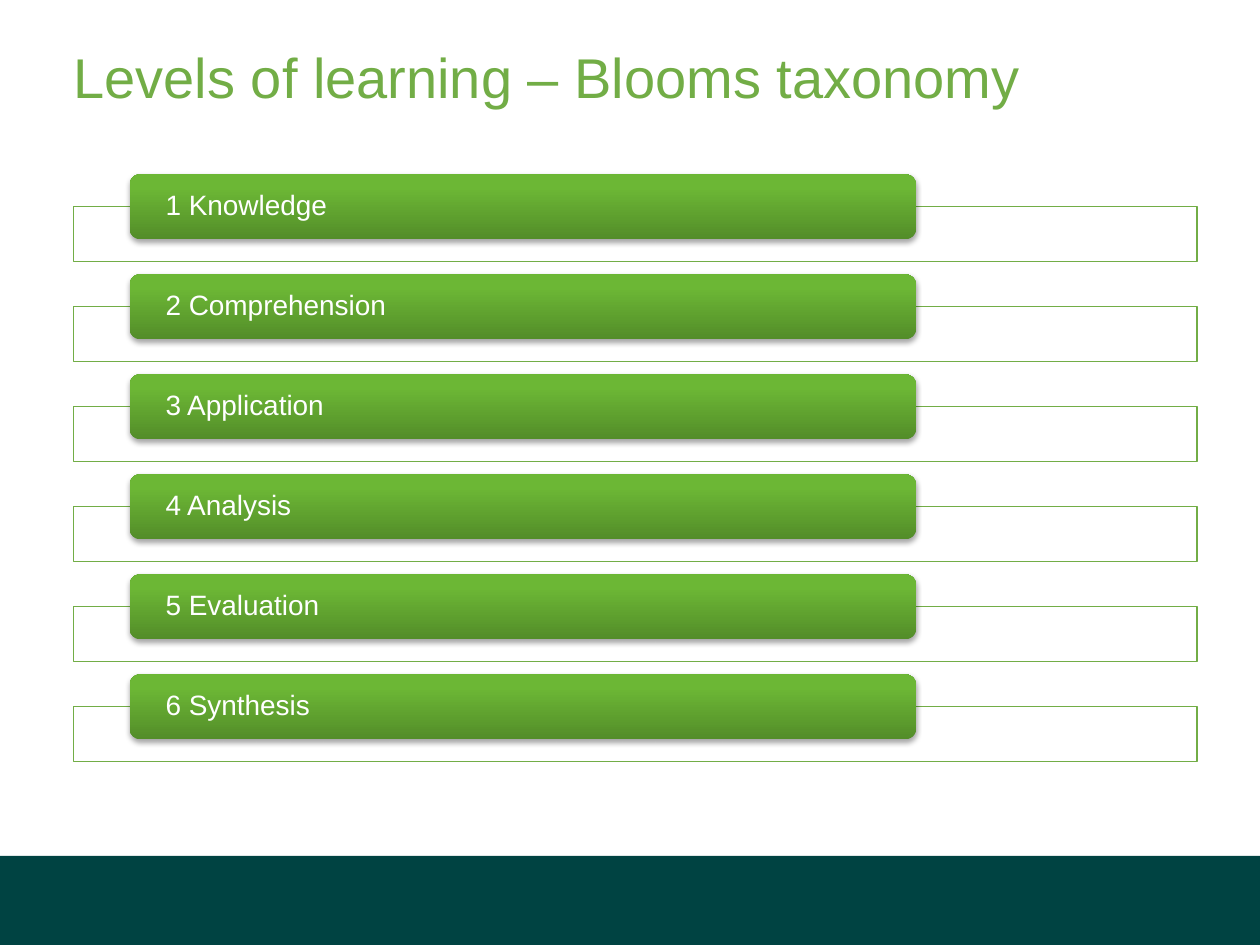
import copy

import pptx
import pptx.dml.color
import pptx.enum.shapes
import pptx.enum.text
import pptx.oxml
import pptx.oxml.ns
import pptx.util

Pt = pptx.util.Pt
RGBColor = pptx.dml.color.RGBColor
SHAPE = pptx.enum.shapes.MSO_SHAPE
ANCHOR = pptx.enum.text.MSO_ANCHOR
ALIGN = pptx.enum.text.PP_ALIGN
qn = pptx.oxml.ns.qn

WHITE = RGBColor(0xFF, 0xFF, 0xFF)
TEAL = RGBColor(0x00, 0x43, 0x42)
GREEN = RGBColor(0x72, 0xAD, 0x46)
BAR_GRADIENT = [
    (0, RGBColor(0x53, 0x8D, 0x29)),
    (0.8, RGBColor(0x6C, 0xB7, 0x35)),
    (1, RGBColor(0x6C, 0xBA, 0x33)),
]

FONT = "Arial"
LEFT, CONTENT_WIDTH = 42, 642
FIRST_BAR_TOP, LEVEL_PITCH = 99.6, 57.15
BAR_LEFT, BAR_WIDTH, BAR_HEIGHT = 74.1, 449.4, 37.2
FRAME_OFFSET, FRAME_HEIGHT = 18.5, 31.5
LEVELS = ["Knowledge", "Comprehension", "Application",
          "Analysis", "Evaluation", "Synthesis"]

SHADOW_XML = (
    f'<a:outerShdw {pptx.oxml.ns.nsdecls("a")} blurRad="{Pt(3.1)}" dist="{Pt(1.8)}"'
    ' dir="5400000" rotWithShape="0">'
    '<a:srgbClr val="000000"><a:alpha val="35000"/></a:srgbClr></a:outerShdw>'
)


def add_box(slide, kind, left, top, width, height):
    """Add a shape without line or shadow."""
    box = slide.shapes.add_shape(kind, Pt(left), Pt(top), Pt(width), Pt(height))
    box.shadow.inherit = False
    box.line.fill.background()
    return box


def fill_solid(box, color):
    box.fill.solid()
    box.fill.fore_color.rgb = color


def fill_gradient(box):
    """Fill a bar from dark at the bottom to bright at the top."""
    box.fill.gradient()
    box.fill.gradient_angle = 90
    first_stop = box._element.spPr.find(".//" + qn("a:gs"))
    first_stop.addnext(copy.deepcopy(first_stop))
    for stop, (position, color) in zip(box.fill.gradient_stops, BAR_GRADIENT):
        stop.position = position
        stop.color.rgb = color


def set_text(box, text, size, color, anchor, inset=0):
    """Write one left-aligned paragraph."""
    frame = box.text_frame
    frame.text = text
    frame.word_wrap = True
    frame.auto_size = pptx.enum.text.MSO_AUTO_SIZE.NONE
    frame.vertical_anchor = anchor
    frame.margin_left = frame.margin_right = Pt(inset)
    frame.margin_top = frame.margin_bottom = 0
    paragraph = frame.paragraphs[0]
    paragraph.alignment = ALIGN.LEFT
    font = paragraph.runs[0].font
    font.name, font.size = FONT, Pt(size)
    font.color.rgb = color
    return paragraph


def add_title(slide, text):
    title = slide.shapes.title
    title.left, title.top = Pt(LEFT), Pt(24)
    title.width, title.height = Pt(CONTENT_WIDTH), Pt(60)
    set_text(title, text, 32, GREEN, ANCHOR.TOP)


def add_level(slide, top, label):
    """Add an outlined frame with a labelled bar across its upper edge."""
    frame = add_box(slide, SHAPE.RECTANGLE, LEFT, top + FRAME_OFFSET,
                    CONTENT_WIDTH, FRAME_HEIGHT)
    fill_solid(frame, WHITE)
    frame.line.color.rgb = GREEN
    frame.line.width = Pt(0.75)

    bar = add_box(slide, SHAPE.ROUNDED_RECTANGLE, BAR_LEFT, top, BAR_WIDTH, BAR_HEIGHT)
    fill_gradient(bar)
    effects = bar._element.spPr.find(qn("a:effectLst"))
    effects.append(pptx.oxml.parse_xml(SHADOW_XML))
    paragraph = set_text(bar, label, 16, WHITE, ANCHOR.MIDDLE, inset=18.7)
    paragraph.line_spacing = 0.9


def main():
    deck = pptx.Presentation()
    deck.slide_width, deck.slide_height = Pt(720), Pt(540)
    slide = deck.slides.add_slide(deck.slide_layouts[5])

    # Footer band
    band = add_box(slide, SHAPE.RECTANGLE, 0, 489, 720, 51)
    fill_solid(band, TEAL)

    add_title(slide, "Levels of learning – Blooms taxonomy")

    # Six levels, evenly spaced
    for index, name in enumerate(LEVELS):
        add_level(slide, FIRST_BAR_TOP + index * LEVEL_PITCH, f"{index + 1} {name}")

    deck.save("out.pptx")


if __name__ == "__main__":
    main()
